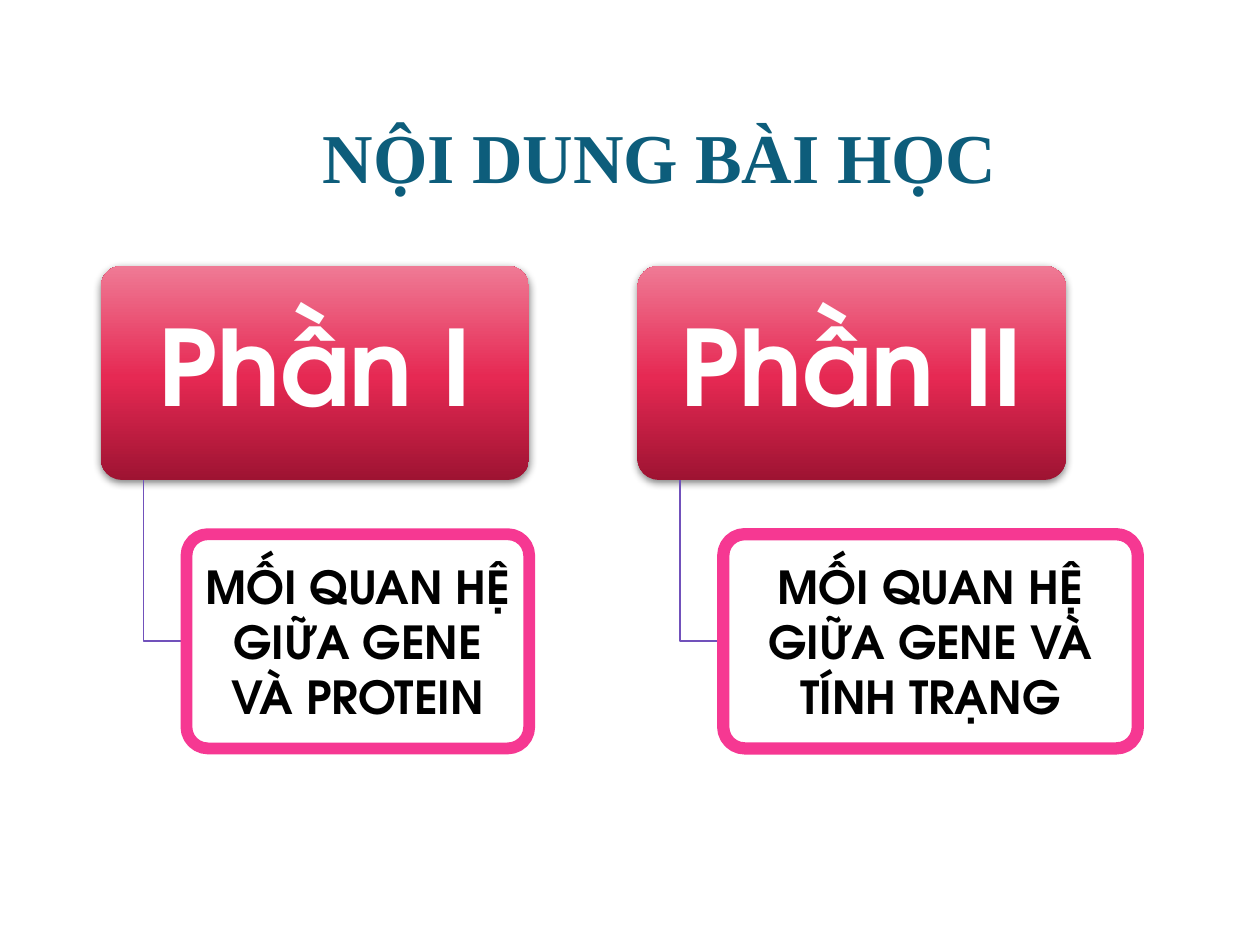
from lxml.etree import SubElement
from pptx import Presentation
from pptx.dml.color import RGBColor
from pptx.enum.shapes import MSO_SHAPE as SHAPE
from pptx.enum.text import MSO_ANCHOR as ANCHOR, PP_ALIGN as ALIGN
from pptx.oxml.ns import qn
from pptx.util import Inches, Pt

TEAL = RGBColor(0x0D, 0x5D, 0x7B)
DARK_RED = RGBColor(0x9E, 0x13, 0x32)
RED = RGBColor(0xE6, 0x29, 0x53)
LIGHT_RED = RGBColor(0xEF, 0x7A, 0x95)
PINK = RGBColor(0xF6, 0x38, 0x92)
PURPLE = RGBColor(0x71, 0x51, 0xBB)
WHITE = RGBColor(0xFF, 0xFF, 0xFF)
BLACK = RGBColor(0, 0, 0)


class Deck:
    title_font = "Times New Roman"
    body_font = "TeX Gyre Adventor"
    box_height = 1.7

    def __init__(self, slide):
        self.s = slide

    def label(self, sp, text, size, color, font, align=ALIGN.CENTER, spacing=1.0):
        tf = sp.text_frame
        tf.text = text
        tf.word_wrap = True
        tf.vertical_anchor = ANCHOR.MIDDLE
        p = tf.paragraphs[0]
        p.alignment = align
        p.line_spacing = spacing
        f = p.runs[0].font
        f.name, f.size, f.bold = font, Pt(size), True
        f.color.rgb = color

    def title(self, text, x, y, w, h):
        sp = self.s.shapes.title
        sp.left, sp.top, sp.width, sp.height = map(Inches, (x, y, w, h))
        self.label(sp, text, 40, TEAL, self.title_font, ALIGN.RIGHT, 0.9)

    def box(self, x, y, w, inset_x, inset_y):
        sp = self.s.shapes.add_shape(
            SHAPE.ROUNDED_RECTANGLE, *map(Inches, (x, y, w, self.box_height)))
        sp.adjustments[0] = 0.1
        sp.shadow.inherit = False
        tf = sp.text_frame
        tf.margin_left = tf.margin_right = Inches(inset_x)
        tf.margin_top = tf.margin_bottom = Inches(inset_y)
        return sp

    def heading(self, text, x, y, w):
        sp = self.box(x, y, w, 0.12, 0.08)
        sp.line.fill.background()
        sp.fill.gradient()
        sp.fill.gradient_angle = 90
        spPr = sp._element.spPr
        stops = spPr.find(".//" + qn("a:gsLst"))
        stops.clear()
        for pos, color in ((0, DARK_RED), (48, RED), (100, LIGHT_RED)):
            gs = SubElement(stops, qn("a:gs"), pos=str(pos * 1000))
            SubElement(gs, qn("a:srgbClr"), val=str(color))
        shadow = SubElement(
            spPr.find(qn("a:effectLst")), qn("a:outerShdw"), blurRad=str(Pt(4.5)),
            dist=str(Pt(1.5)), dir="5400000", rotWithShape="0")
        black = SubElement(shadow, qn("a:srgbClr"), val=str(BLACK))
        SubElement(black, qn("a:alpha"), val="48000")
        self.label(sp, text, 60, WHITE, self.body_font, spacing=0.9)

    def topic(self, text, x, y, w, border):
        sp = self.box(x, y, w, 0.05, 0.04)
        sp.fill.solid()
        sp.fill.fore_color.rgb = WHITE
        color = sp._element.spPr.find(qn("a:solidFill"))[0]
        SubElement(color, qn("a:alpha"), val="90000")
        sp.line.color.rgb = PINK
        sp.line.width = Pt(border)
        self.label(sp, text, 26, BLACK, self.body_font)

    def elbow(self, x, y, w, h):
        outline = self.s.shapes.build_freeform(Inches(x), Inches(y))
        corner = (Inches(x), Inches(y + h))
        end = (Inches(x + w), Inches(y + h))
        outline.add_line_segments([corner, end], close=False)
        sp = outline.convert_to_shape()
        sp.fill.background()
        sp.line.color.rgb = PURPLE
        sp.line.width = Pt(1)
        sp.shadow.inherit = False


def main():
    prs = Presentation()
    prs.slide_width, prs.slide_height = Inches(10), Inches(7.5)
    deck = Deck(prs.slides.add_slide(prs.slide_layouts[5]))
    deck.title("NỘI DUNG BÀI HỌC", 2.37, 0.88, 5.64, 0.79)

    left, top, pitch, width = 0.8, 2.11, 4.26, 3.4
    indent, reach, drop = 0.34, 0.34, 1.28
    bottom = top + deck.box_height
    topic_top = bottom + drop - deck.box_height / 2
    parts = [
        ("Phần I", "MỐI QUAN HỆ GIỮA GENE VÀ PROTEIN", 2.72, 6.75),
        ("Phần II", "MỐI QUAN HỆ GIỮA GENE VÀ TÍNH TRẠNG", 3.29, 7),
    ]
    for i, (name, topic, topic_width, border) in enumerate(parts):
        x = left + i * pitch
        deck.heading(name, x, top, width)
        deck.elbow(x + indent, bottom, reach, drop)
        deck.topic(topic, x + indent + reach, topic_top, topic_width, border)

    prs.save("out.pptx")


if __name__ == "__main__":
    main()
